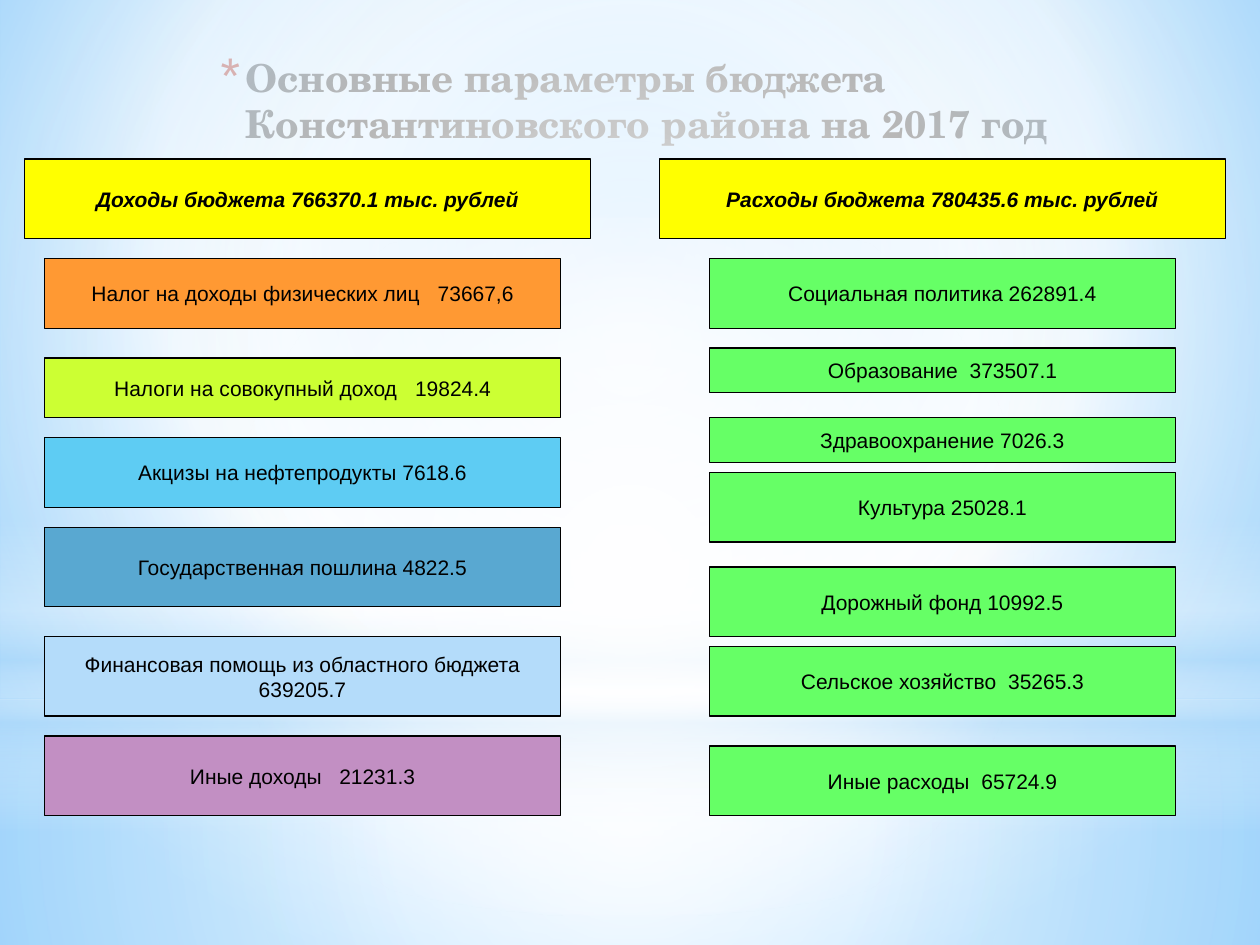
from lxml import etree
from pptx import Presentation
from pptx.dml.color import RGBColor
from pptx.enum.shapes import MSO_SHAPE
from pptx.enum.text import MSO_ANCHOR, MSO_AUTO_SIZE, PP_ALIGN
from pptx.oxml import parse_xml
from pptx.oxml.ns import nsdecls, qn
from pptx.util import Inches, Pt

RECT, OVAL = MSO_SHAPE.RECTANGLE, MSO_SHAPE.OVAL
TOP, MIDDLE = MSO_ANCHOR.TOP, MSO_ANCHOR.MIDDLE
LEFT, CENTER = PP_ALIGN.LEFT, PP_ALIGN.CENTER
NO_FIT = MSO_AUTO_SIZE.NONE
TITLE_ONLY = 5
COLUMNS, ROWS = 127, 95
SPACE_WIDTH = 3.33

COLORS = {
    "black": "000000", "white": "FFFFFF", "heading": "404040", "bullet": "C3260C",
    "yellow": "FFFF00", "orange": "FF9933", "lime": "CCFF33", "cyan": "5ECCF3",
    "steel": "59A8D1", "pale": "B4DCFA", "mauve": "C28FC3", "green": "66FF66",
    "sky": "9ED5FF", "azure": "5BB9FF",
}
FORMATS = {
    "title": {"name": "TeX Gyre Schola", "size": Pt(22), "bold": True},
    "total": {"name": "Arial", "size": Pt(12), "bold": True, "italic": True},
    "item": {"name": "Arial", "size": Pt(12)},
}
RADIAL = (50, 50, 50, 50)

BACKDROP = [
    (RECT, (0, 0.74, 1, 0.26), [(0, "white", 91), (37, "white", 76), (100, "pale", 79)], RADIAL),
    (RECT, (0, 0, 1, 0.74), [(0, "white", 89), (48, "white", 62), (100, "pale", 79)], RADIAL),
    (RECT, (0, 0.55, 1, 0.33), [(0, "white", 0), (29, "white", 30), (45, "pale", 40),
                                (55, "white", 26), (65, "pale", 60), (100, "white", 0)], None),
    (OVAL, (0, 0.23, 1, 0.74), [(0, "white", 100), (56, "white", 0)], RADIAL),
]

INCOME = [
    ("Налог на доходы физических лиц", "73667,6", 3, "orange", 26, 7),
    ("Налоги на совокупный доход", "19824.4", 3, "lime", 36, 6),
    ("Акцизы на нефтепродукты", "7618.6", 1, "cyan", 44, 7),
    ("Государственная пошлина", "4822.5", 1, "steel", 53, 8),
    ("Финансовая помощь из областного бюджета", "639205.7", 3, "pale", 64, 8),
    ("Иные доходы", "21231.3", 3, "mauve", 74, 8),
]
SPENDING = [
    ("Социальная политика", "262891.4", 1, "green", 26, 7),
    ("Образование", "373507.1", 2, "green", 35, 4.5),
    ("Здравоохранение", "7026.3", 1, "green", 42, 4.5),
    ("Культура", "25028.1", 1, "green", 47.5, 7),
    ("Дорожный фонд", "10992.5", 1, "green", 57, 7),
    ("Сельское хозяйство", "35265.3", 2, "green", 65, 7),
    ("Иные расходы", "65724.9", 2, "green", 75, 7),
]
SIDES = [
    ("Доходы бюджета 766370.1 тыс. рублей", 2.5, INCOME, 4.5, 52),
    ("Расходы бюджета 780435.6 тыс. рублей", 66.5, SPENDING, 71.5, 47),
]


def rgb(color):
    return RGBColor.from_string(COLORS[color])


class BudgetSlide:
    def __init__(self, deck):
        self.width, self.height = deck.slide_width, deck.slide_height
        self.slide = deck.slides.add_slide(deck.slide_layouts[TITLE_ONLY])

    def place(self, x, y, w, h):
        return (round(x * self.width), round(y * self.height),
                round(w * self.width), round(h * self.height))

    def gradient(self, properties, stops, focus):
        fill = parse_xml(f'<a:gradFill {nsdecls("a")} rotWithShape="1"><a:gsLst/></a:gradFill>')
        for position, color, opacity in stops:
            stop = etree.SubElement(fill[0], qn("a:gs"), pos=str(position * 1000))
            tint = etree.SubElement(stop, qn("a:srgbClr"), val=COLORS[color])
            if opacity < 100:
                etree.SubElement(tint, qn("a:alpha"), val=str(opacity * 1000))
        if focus:
            circle = etree.SubElement(fill, qn("a:path"), {"path": "circle"})
            edges = {side: str(share * 1000) for side, share in zip("ltrb", focus)}
            etree.SubElement(circle, qn("a:fillToRect"), edges)
        else:
            etree.SubElement(fill, qn("a:lin"), ang="5400000", scaled="0")
        properties.replace(properties.find(qn("a:solidFill")), fill)

    def background(self, stops, focus):
        self.slide.background.fill.solid()
        self.slide.background.fill.fore_color.rgb = rgb("white")
        self.gradient(self.slide.element.find(".//" + qn("p:bgPr")), stops, focus)

    def glow(self, outline, area, stops, focus):
        layer = self.slide.shapes.add_shape(outline, *self.place(*area))
        layer.shadow.inherit = False
        layer.line.fill.background()
        layer.fill.solid()
        self.gradient(layer.element.spPr, stops, focus)

    def add_words(self, paragraph, words, style, color):
        run = paragraph.add_run()
        run.text = words
        for attribute, value in FORMATS[style].items():
            setattr(run.font, attribute, value)
        run.font.color.rgb = rgb(color)
        return run

    def title(self, words, area):
        heading = self.slide.shapes.title
        heading.left, heading.top, heading.width, heading.height = self.place(*area)
        frame = heading.text_frame
        frame.word_wrap, frame.auto_size, frame.vertical_anchor = True, NO_FIT, TOP
        paragraph = frame.paragraphs[0]
        paragraph.alignment = LEFT
        self.add_words(paragraph, words, "title", "heading")
        layout = paragraph._p.get_or_add_pPr()
        layout.set("marL", str(Inches(0.25)))
        layout.set("indent", str(Inches(-0.2)))
        for tag, inner, value in (("spcBef", "spcPct", "20000"), ("spcAft", "spcPts", "300"),
                                  ("buClr", "srgbClr", COLORS["bullet"])):
            etree.SubElement(etree.SubElement(layout, qn("a:" + tag)), qn("a:" + inner), val=value)
        etree.SubElement(layout, qn("a:buSzPct"), val="130000")
        etree.SubElement(layout, qn("a:buFont"), typeface="Arial")
        etree.SubElement(layout, qn("a:buChar"), char="*")

    def box(self, column, row, columns, rows, color, wrap=True):
        area = (column / COLUMNS, row / ROWS, columns / COLUMNS, rows / ROWS)
        panel = self.slide.shapes.add_shape(RECT, *self.place(*area))
        panel.shadow.inherit = False
        panel.fill.solid()
        panel.fill.fore_color.rgb = rgb(color)
        panel.line.color.rgb = rgb("black")
        panel.line.width = Pt(0.75)
        panel.text_frame.word_wrap = wrap
        panel.text_frame.vertical_anchor = MIDDLE
        paragraph = panel.text_frame.paragraphs[0]
        paragraph.alignment = CENTER
        return paragraph

    def total(self, words, column):
        self.add_words(self.box(column, 16, 57, 8, "yellow", wrap=False), words, "total", "black")

    def item(self, label, amount, spaces, color, column, row, columns, rows):
        paragraph = self.box(column, row, columns, rows, color)
        self.add_words(paragraph, label, "item", "black")
        gap = self.add_words(paragraph, " ", "item", "black")
        gap._r.get_or_add_rPr().set("spc", str(round((spaces - 1) * SPACE_WIDTH * 100)))
        self.add_words(paragraph, amount, "item", "black")


def main():
    deck = Presentation()
    deck.slide_width, deck.slide_height = Inches(10), Inches(7.5)
    budget = BudgetSlide(deck)
    budget.background([(0, "sky", 100), (60, "white", 100), (100, "azure", 100)], (20, 10, 20, 60))
    for layer in BACKDROP:
        budget.glow(*layer)
    budget.title("Основные параметры бюджета Константиновского района на 2017 год",
                 (0.16, 0.05, 0.7, 0.12))
    for total, total_column, items, column, columns in SIDES:
        budget.total(total, total_column)
        for label, amount, spaces, color, row, rows in items:
            budget.item(label, amount, spaces, color, column, row, columns, rows)
    deck.save("out.pptx")


if __name__ == "__main__":
    main()
